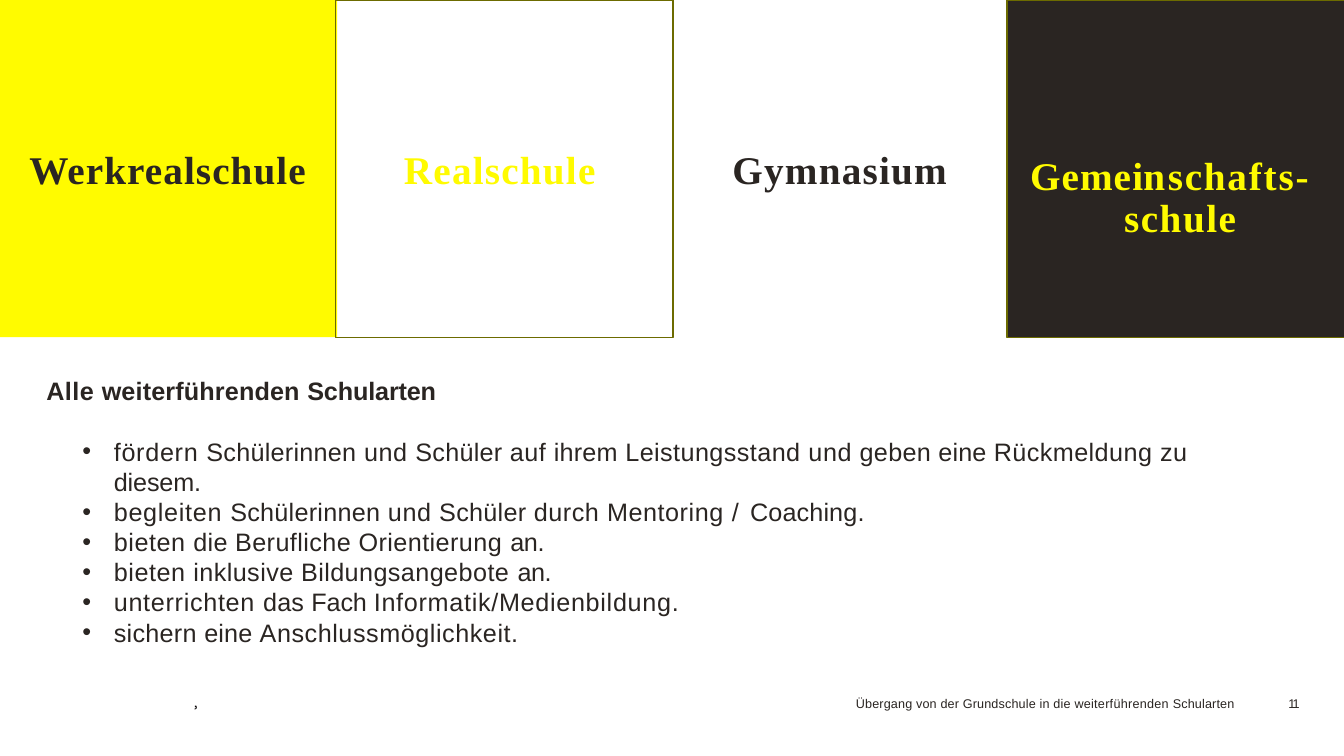
from lxml import etree
from pptx import Presentation
from pptx.dml.color import RGBColor
from pptx.enum.shapes import MSO_SHAPE
from pptx.enum.text import MSO_ANCHOR, PP_ALIGN
from pptx.oxml.ns import qn
from pptx.util import Cm, Pt

RECTANGLE = MSO_SHAPE.RECTANGLE
TOP = MSO_ANCHOR.TOP
LEFT = PP_ALIGN.LEFT

YELLOW = RGBColor(0xFF, 0xFB, 0x00)
DARK = RGBColor(0x2A, 0x25, 0x22)
OLIVE = RGBColor(0x6C, 0x6B, 0x00)
INK = RGBColor(0x08, 0x05, 0x07)

SIDE = 8.5
PITCH = 8.46

# Each text is a list of (words, letter spacing in points)
FOOTER = [("Übergang von der Grundschule in die ", 0.1),
          ("weiterführenden ", 0.2), ("Schularten", 0.1)]
HEADING = [("Alle ", 0.3), ("weiterführenden ", 0.1), ("Schularten", -0.1)]
BULLETS = [
    [("fördern ", 0.5), ("Schülerinnen ", 0.2), ("und ", 0.4), ("Schüler ", 0.2),
     ("auf ", 0.3), ("ihrem ", 0.2), ("Leistungsstand ", 0.3), ("und ", 0.4),
     ("geben ", 0.2), ("eine ", 0.1), ("Rückmeldung ", 0.3), ("zu ", 0.2),
     ("diesem.", -0.1)],
    [("begleiten ", 0.5), ("Schülerinnen ", 0.2), ("und ", 0.4), ("Schüler ", 0.2),
     ("durch Mentoring ", 0.4), ("/ ", 1.5), ("Coaching.", 0.1)],
    [("bieten ", 0.4), ("die ", 0.2), ("Berufliche Orientierung ", 0.3), ("an.", -0.3)],
    [("bieten ", 0.4), ("inklusive Bildungsangebote ", 0.3), ("an.", -0.3)],
    [("unterrichten ", 0.5), ("das ", 0.1), ("Fach ", -0.1),
     ("Informatik/Medienbildung.", 0.5)],
    [("sichern ", 0.2), ("eine ", 0.1), ("Anschlussmöglichkeit.", 0.4)],
]
# Name, left edge in cm, letter spacing, colour
SCHOOL_TYPES = [("Werkrealschule", 0.74, 0.8, DARK),
                ("Realschule", 10.18, 0.9, YELLOW),
                ("Gymnasium", 18.46, 0.9, DARK)]
COMMA = [(495, 1778), (491, 1778), (491, 1782), (494, 1782), (493, 1785),
         (490, 1786), (491, 1788), (495, 1786), (496, 1782)]


class SlideBuilder:
    """Holds the current slide and its two fonts."""

    body_font = "Arial"
    title_font = "Times New Roman"

    def __init__(self, page):
        self.page = page

    def frame(self, shape, top=0.03):
        frame = shape.text_frame
        frame.word_wrap = True
        frame.vertical_anchor = TOP
        frame.margin_left = frame.margin_right = frame.margin_bottom = 0
        frame.margin_top = Cm(top)
        return frame

    def text_box(self, left, top, width, height):
        return self.frame(self.page.shapes.add_textbox(
            Cm(left), Cm(top), Cm(width), Cm(height)))

    def spans(self, para, parts, size, font=body_font, color=DARK, bold=False):
        for words, spacing in parts:
            span = para.add_run()
            span.text = words
            span.font.name = font
            span.font.size = Pt(size)
            span.font.bold = bold
            span.font.color.rgb = color
            span.font._element.set("spc", str(round(spacing * 100)))

    def school_name(self, para, parts, color):
        self.spans(para, parts, 28, self.title_font, color, True)

    def indent(self, para, margin, first):
        properties = para._p.get_or_add_pPr()
        properties.set("marL", str(Cm(margin)))
        properties.set("indent", str(Cm(first)))
        return properties

    def bullet(self, para):
        properties = self.indent(para, 1.73, -0.79)
        etree.SubElement(properties, qn("a:buFont"), typeface=self.body_font)
        etree.SubElement(properties, qn("a:buChar"), char="•")

    def paint(self, shape, fill=None, line=None):
        shape.shadow.inherit = False
        if fill is None:
            shape.fill.background()
        else:
            shape.fill.solid()
            shape.fill.fore_color.rgb = fill
        if line is None:
            shape.line.fill.background()
        else:
            shape.line.color.rgb = line
            shape.line.width = Pt(0.96)
        return shape

    def square(self, column, fill=None, line=None):
        shape = self.page.shapes.add_shape(
            RECTANGLE, Cm(column * PITCH), 0, Cm(SIDE), Cm(SIDE))
        return self.paint(shape, fill, line)

    def outline(self, points, fill):
        builder = self.page.shapes.build_freeform(*points[0], scale=Cm(0.01))
        builder.add_line_segments(points[1:], close=True)
        return self.paint(builder.convert_to_shape(), fill)


def main():
    deck = Presentation()
    deck.slide_width, deck.slide_height = Cm(33.87), Cm(19.05)
    page = deck.slides.add_slide(deck.slide_layouts[6])
    slide = SlideBuilder(page)

    # Footer
    slide.outline(COMMA, INK)
    for left, width, parts in ((21.54, 9.63, FOOTER), (32.44, 0.4, [("11", -1.4)])):
        footer = slide.text_box(left, 17.5, width, 0.46).paragraphs[0]
        slide.indent(footer, 0.03, 0)
        slide.spans(footer, parts, 9)

    # Heading and bullet list
    body = slide.text_box(1.14, 9.42, 31, 6.15)
    heading = body.paragraphs[0]
    slide.indent(heading, 0.03, 0)
    slide.spans(heading, HEADING, 18, bold=True)
    for number, parts in enumerate(BULLETS):
        para = body.add_paragraph()
        slide.bullet(para)
        para.line_spacing = Pt(21.55)
        para.space_before = Pt(0 if number else 22)
        slide.spans(para, parts, 18)

    # School type squares
    slide.square(0, fill=YELLOW)
    slide.square(1, line=OLIVE)

    # Names of the first three school types
    for name, left, spacing, color in SCHOOL_TYPES:
        para = slide.text_box(left, 3.62, 7.5, 1.24).paragraphs[0]
        slide.school_name(para, [(name, spacing)], color)

    # Fourth school type
    community = slide.frame(slide.square(3, DARK, OLIVE), top=3.94).paragraphs[0]
    community.alignment = LEFT
    community.line_spacing = Pt(30.2)
    slide.indent(community, 2.95, -2.37)
    slide.school_name(community, [("Geme", 0.8), ("i", 0.2), ("n", 1.8),
                                  ("schafts-", 1.3)], YELLOW)
    community.add_line_break()
    slide.school_name(community, [("schule", 1.1)], YELLOW)

    deck.save("out.pptx")


if __name__ == "__main__":
    main()
